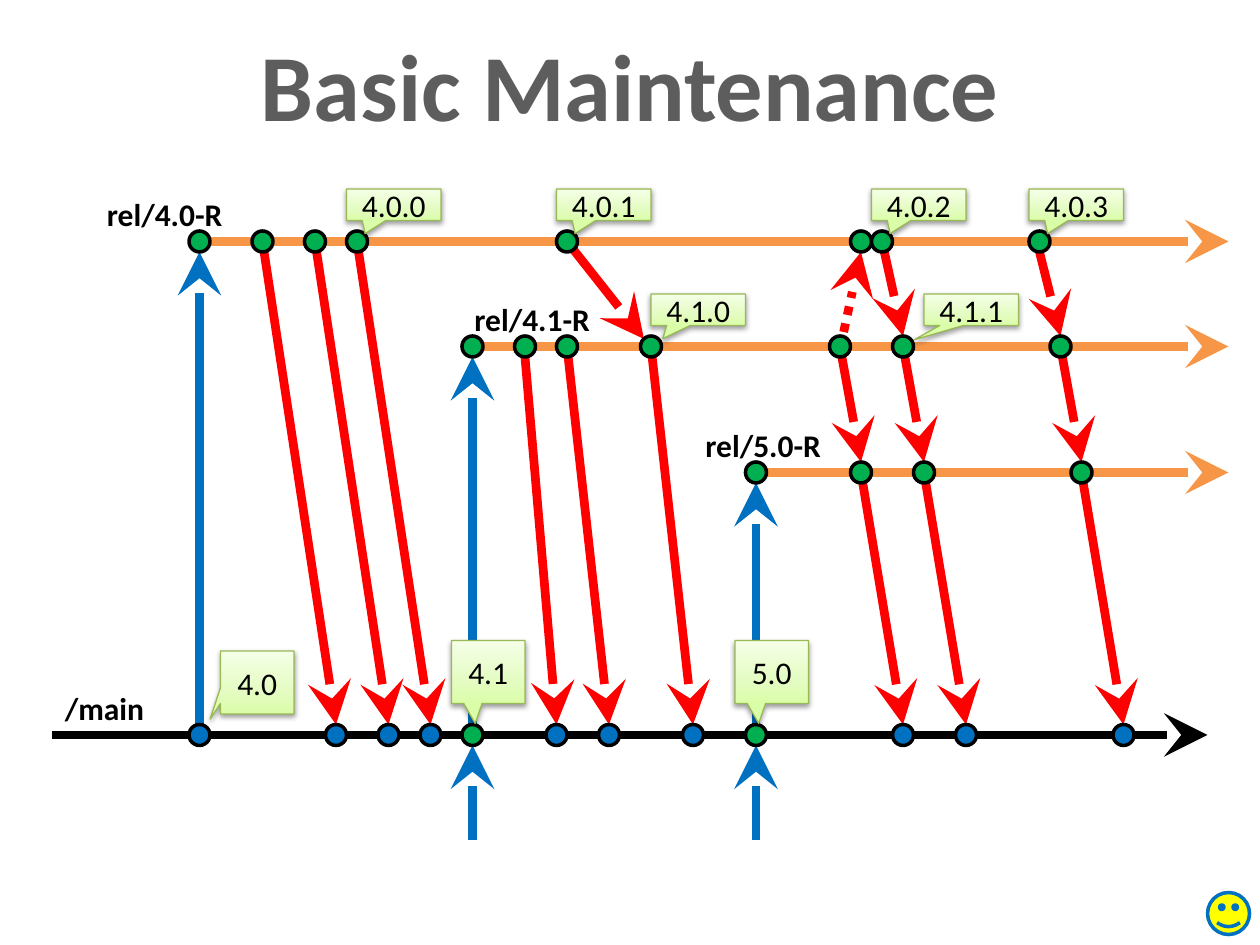
import copy
import dataclasses

import lxml.etree
import pptx
import pptx.dml.color
import pptx.enum.dml
import pptx.enum.shapes
import pptx.enum.text
import pptx.oxml.ns
import pptx.util

Pt = pptx.util.Pt
RGB = pptx.dml.color.RGBColor.from_string
qn = pptx.oxml.ns.qn
SHAPE = pptx.enum.shapes.MSO_SHAPE
ALIGN = pptx.enum.text.PP_ALIGN
ANCHOR = pptx.enum.text.MSO_ANCHOR


@dataclasses.dataclass(frozen=True)
class Theme:
    font: str = "Calibri"
    title_size: int = 54
    text_size: int = 18
    title: str = "5D5D5D"
    black: str = "000000"
    white: str = "FFFFFF"
    merge: str = "FF0000"
    branch: str = "0070C0"
    release: str = "F79646"
    green: str = "00B050"
    smiley: str = "FFFF00"
    tag_line: str = "98B955"
    tag_stops: tuple = ("DAFDA7", "E4FCC2", "F5FFE7")


theme = Theme()

prs = pptx.Presentation()
prs.slide_width, prs.slide_height = Pt(720), Pt(540)
slide = prs.slides.add_slide(prs.slide_layouts[6])
shapes = slide.shapes


def add_shape(kind, x, y, w, h, fill, line, width):
    sp = shapes.add_shape(kind, Pt(x), Pt(y), Pt(w), Pt(h))
    sp.shadow.inherit = False
    sp.fill.solid()
    sp.fill.fore_color.rgb = RGB(fill)
    sp.line.color.rgb = RGB(line)
    sp.line.width = Pt(width)
    return sp


def write(sp, text, size, color, bold, align):
    tf = sp.text_frame
    tf.word_wrap = True
    p = tf.paragraphs[0]
    p.text = text
    p.alignment = align
    p.font.name = theme.font
    p.font.size = Pt(size)
    p.font.bold = bold
    p.font.color.rgb = RGB(color)


title = shapes.add_textbox(Pt(0), Pt(12), Pt(720), Pt(72.7))
write(title, "Basic Maintenance", theme.title_size, theme.title, True, ALIGN.CENTER)

branch_labels = [
    ("rel/4.0-R", 54, 108, 90),
    ("rel/4.1-R", 264, 168, 90),
    ("rel/5.0-R", 396, 240, 90),
    ("/main", 30, 390, 78),
]
for text, x, y, w in branch_labels:
    sp = shapes.add_textbox(Pt(x), Pt(y), Pt(w), Pt(29))
    sp.fill.solid()
    sp.fill.fore_color.rgb = RGB(theme.white)
    write(sp, text, theme.text_size, theme.black, True, ALIGN.LEFT)

Y40, Y41, Y50, MAIN = 138, 198, 270, 420
R = 6

arrows = [(x1, y1, x2, MAIN - R, theme.merge) for x1, y1, x2 in [
    (150, Y40, 192), (180, Y40, 222), (204, Y40, 246),
    (300, Y41 + R, 318), (324, Y41, 348), (372, Y41, 396),
    (492, Y50, 516), (528, Y50, 552), (618, Y50, 642),
]]
arrows += [(x, Y41, x + 12, Y50 - R, theme.merge) for x in (480, 516, 606)]
arrows += [
    (504, Y40, 516, Y41 - R, theme.merge),
    (594, Y40 + R, 606, Y41 - R, theme.merge),
    (324, Y40, 368, 193.7, theme.merge),
    (114, MAIN - R, 114, Y40 + R, theme.branch),
    (270, MAIN, 270, Y41 + R, theme.branch),
    (432, MAIN - R, 432, Y50 + R, theme.branch),
    (270, 480, 270, MAIN + R, theme.branch),
    (432, 480, 432, MAIN + R, theme.branch),
    (120, Y40, 702, Y40, theme.release),
    (270, Y41, 702, Y41, theme.release),
    (438, Y50, 702, Y50, theme.release),
    (30, MAIN, 690, MAIN, theme.black),
]
backport = (480, Y41 + 1.5, 492, Y40 + R, theme.merge)
for arrow in [backport] + arrows:
    x1, y1, x2, y2, color = arrow
    cxn = shapes.add_connector(
        pptx.enum.shapes.MSO_CONNECTOR.STRAIGHT, Pt(x1), Pt(y1), Pt(x2), Pt(y2))
    cxn.line.color.rgb = RGB(color)
    cxn.line.width = Pt(5)
    if arrow == backport:
        cxn.line.dash_style = pptx.enum.dml.MSO_LINE.ROUND_DOT
    spPr = cxn._element.spPr
    lxml.etree.SubElement(
        spPr.find(qn("a:ln")), qn("a:tailEnd"), type="stealth", w="lg", len="lg")
    lxml.etree.SubElement(spPr, qn("a:effectLst"))

commits = [
    (Y40, theme.green, (114, 150, 180, 204, 324, 492, 504, 594)),
    (Y41, theme.green, (270, 300, 324, 372, 480, 516, 606)),
    (Y50, theme.green, (432, 492, 528, 618)),
    (MAIN, theme.green, (270, 432)),
    (MAIN, theme.branch, (114, 192, 222, 246, 318, 348, 396, 516, 552, 642)),
]
for y, fill, xs in commits:
    for x in xs:
        add_shape(SHAPE.OVAL, x - R, y - R, 2 * R, 2 * R, fill, theme.black, 2)

LARGE, SMALL = (42, 36), (54, 18)
tags = [
    ("4.0", 126, 372, LARGE, (-0.641, 0.583)),
    ("4.1", 258, 366, LARGE, (-0.177, 0.817)),
    ("5.0", 420, 366, LARGE, (-0.177, 0.817)),
    ("4.0.0", 198, 108, SMALL, (-0.303, 0.916)),
    ("4.0.1", 318, 108, SMALL, (-0.303, 0.916)),
    ("4.0.2", 498, 108, SMALL, (-0.303, 0.916)),
    ("4.0.3", 588, 108, SMALL, (-0.303, 0.916)),
    ("4.1.0", 372, 168, SMALL, (-0.375, 0.916)),
    ("4.1.1", 528, 168, SMALL, (-0.603, 0.952)),
]
for text, x, y, (w, h), pointer in tags:
    sp = add_shape(SHAPE.RECTANGULAR_CALLOUT, x, y, w, h,
                   theme.white, theme.tag_line, 0.75)
    sp.adjustments[0], sp.adjustments[1] = pointer
    sp.fill.gradient()
    sp.fill.gradient_angle = 90
    spPr = sp._element.spPr
    gs_list = spPr.find(qn("a:gradFill")).find(qn("a:gsLst"))
    gs_list.insert(1, copy.deepcopy(gs_list[0]))
    gs_list[1].set("pos", "35000")
    for stop, color in zip(sp.fill.gradient_stops, theme.tag_stops):
        stop.color.rgb = RGB(color)
    shadow = lxml.etree.SubElement(
        spPr.find(qn("a:effectLst")), qn("a:outerShdw"),
        blurRad=str(Pt(3.1)), dist=str(Pt(1.6)), dir="5400000", rotWithShape="0")
    clr = lxml.etree.SubElement(shadow, qn("a:srgbClr"), val=theme.black)
    lxml.etree.SubElement(clr, qn("a:alpha"), val="38000")
    sp.text_frame.vertical_anchor = ANCHOR.MIDDLE
    write(sp, text, theme.text_size, theme.black, False, ALIGN.CENTER)

add_shape(SHAPE.SMILEY_FACE, 690, 510, 24, 24, theme.smiley, theme.branch, 2)

prs.save("out.pptx")
